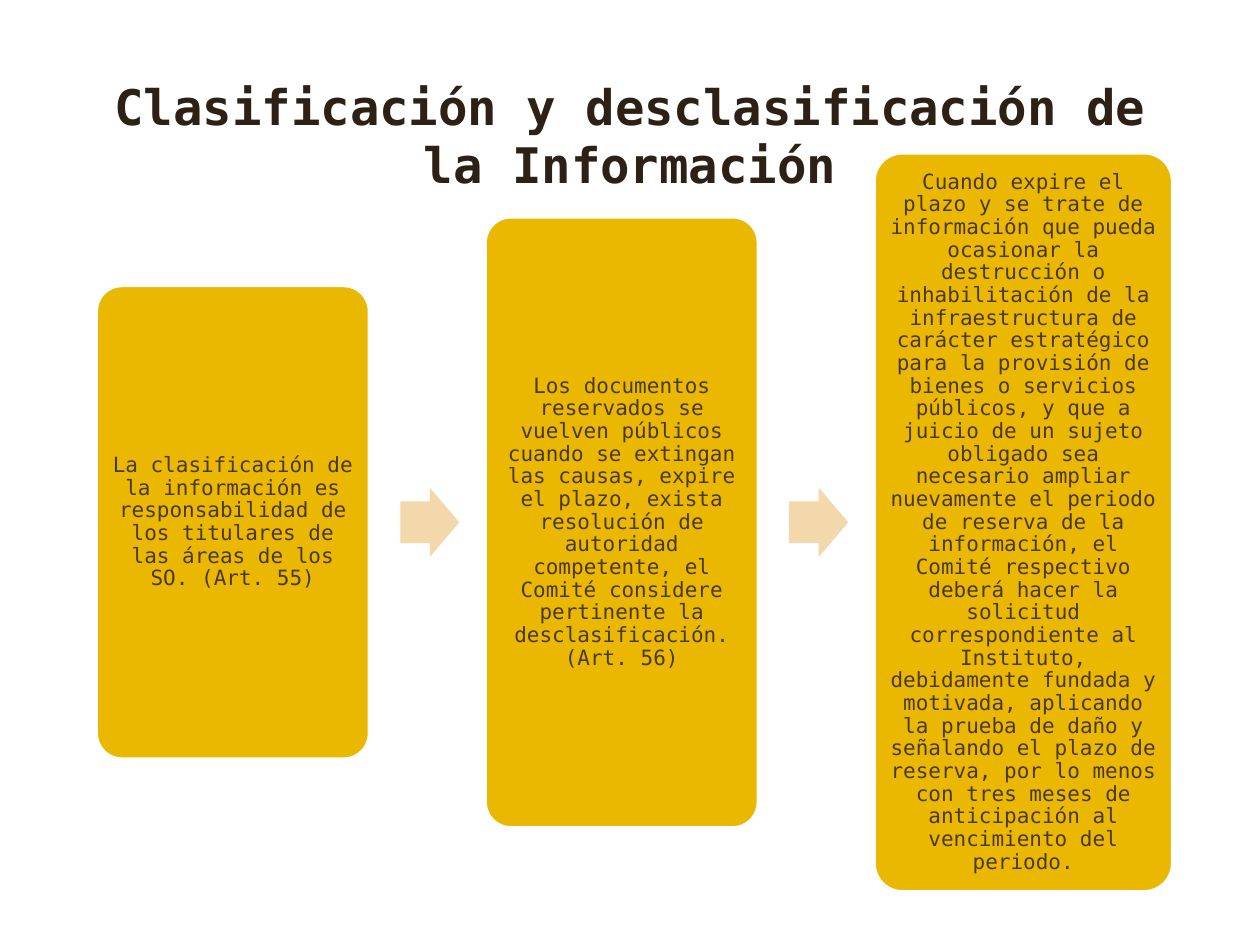
from pptx import Presentation
from pptx.dml.color import RGBColor
from pptx.enum.shapes import MSO_SHAPE as SHAPE
from pptx.enum.text import MSO_ANCHOR as ANCHOR, MSO_AUTO_SIZE as AUTO, PP_ALIGN as ALIGN
from pptx.util import Cm, Pt

FONT = "DejaVu Sans Mono"
TITLE = "Clasificación y desclasificación de la Información"
# Width, height and text of each step
STEPS = [
    (5.59, 9.63,
     "La clasificación de la información es responsabilidad de los titulares "
     "de las áreas de los SO. (Art. 55)"),
    (5.59, 12.4,
     "Los documentos reservados se vuelven públicos cuando se extingan las "
     "causas, expire el plazo, exista resolución de autoridad competente, el "
     "Comité considere pertinente la desclasificación. (Art. 56)"),
    (6.1, 14.98,
     "Cuando expire el plazo y se trate de información que pueda ocasionar la "
     "destrucción o inhabilitación de la infraestructura de carácter "
     "estratégico para la provisión de bienes o servicios públicos, y que a "
     "juicio de un sujeto obligado sea necesario ampliar nuevamente el periodo "
     "de reserva de la información, el Comité respectivo deberá hacer la "
     "solicitud correspondiente al Instituto, debidamente fundada y motivada, "
     "aplicando la prueba de daño y señalando el plazo de reserva, por lo menos "
     "con tres meses de anticipación al vencimiento del periodo."),
]
STEP_LEFT, STEP_PITCH, MIDDLE = 1.9, 7.84, 10.53
ARROW_OFFSET, ARROW_W, ARROW_H = 6.17, 1.19, 1.4


def color(value):
    return RGBColor.from_string(value)


class FlowSlide:
    title_color, text_color = "2C2114", "4B3822"
    card_color, arrow_color, line_color = "EAB800", "F3D8AB", "FFFFFF"

    def __init__(self, prs):
        self.slide = prs.slides.add_slide(prs.slide_layouts[0])
        subtitle = self.slide.placeholders[1]
        subtitle.element.getparent().remove(subtitle.element)

    def set_text(self, tf, text, size, hex_color, bold=False):
        """Fill a text frame with one centred paragraph and return it."""
        tf.text = text
        tf.word_wrap = True
        tf.auto_size = AUTO.NONE
        tf.vertical_anchor = ANCHOR.MIDDLE
        p = tf.paragraphs[0]
        p.alignment = ALIGN.CENTER
        font = p.runs[0].font
        font.name, font.size, font.bold = FONT, Pt(size), bold
        font.color.rgb = color(hex_color)
        return p

    def title(self, text):
        sp = self.slide.shapes.title
        sp.left, sp.top, sp.width, sp.height = Cm(1.9), Cm(1.32), Cm(21.6), Cm(2.8)
        self.set_text(sp.text_frame, text, 28, self.title_color, bold=True)

    def shape(self, kind, left, width, height, fill):
        """Add a filled shape centred on the middle line of the flow."""
        sp = self.slide.shapes.add_shape(
            kind, Cm(left), Cm(MIDDLE - height / 2), Cm(width), Cm(height))
        sp.shadow.inherit = False
        sp.fill.solid()
        sp.fill.fore_color.rgb = color(fill)
        sp.line.fill.background()
        return sp

    def card(self, left, width, height, text):
        sp = self.shape(SHAPE.ROUNDED_RECTANGLE, left, width, height, self.card_color)
        sp.adjustments[0] = 0.1
        sp.line.color.rgb = color(self.line_color)
        sp.line.width = Pt(4.33)
        tf = sp.text_frame
        tf.margin_left = tf.margin_right = tf.margin_top = tf.margin_bottom = Cm(0.12)
        self.set_text(tf, text, 12, self.text_color).line_spacing = 0.9

    def arrow(self, left):
        sp = self.shape(SHAPE.RIGHT_ARROW, left, ARROW_W, ARROW_H, self.arrow_color)
        sp.adjustments[0] = 0.6
        sp.adjustments[1] = 0.5


def main():
    prs = Presentation()
    prs.slide_width, prs.slide_height = Cm(25.4), Cm(19.05)
    s = FlowSlide(prs)
    s.title(TITLE)
    for i, (width, height, text) in enumerate(STEPS):
        left = STEP_LEFT + i * STEP_PITCH
        s.card(left, width, height, text)
        if i < len(STEPS) - 1:
            s.arrow(left + ARROW_OFFSET)
    prs.save("out.pptx")


if __name__ == "__main__":
    main()
